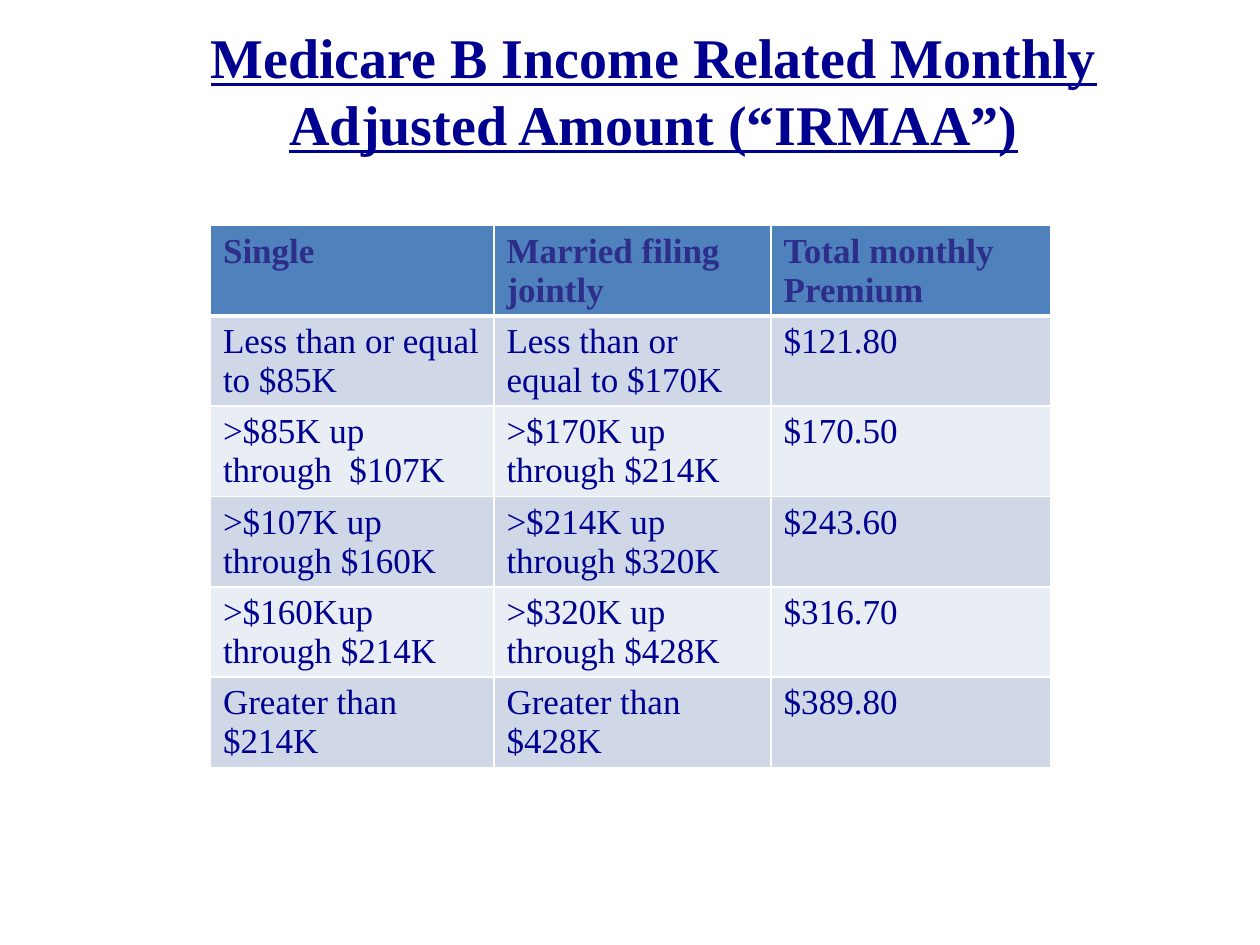
from pptx import Presentation
from pptx.dml.color import RGBColor
from pptx.enum.text import MSO_ANCHOR, MSO_AUTO_SIZE, PP_ALIGN
from pptx.oxml.ns import qn
from pptx.util import Inches, Pt
from lxml import etree

CENTER = PP_ALIGN.CENTER
MIDDLE = MSO_ANCHOR.MIDDLE
NO_AUTOFIT = MSO_AUTO_SIZE.NONE
TITLE_ONLY = 5

FONT = "Times New Roman"
NAVY = "000090"
HEADER_TEXT = "2D2D8A"
HEADER_FILL = "4F81BD"
BAND_FILLS = ("D0D8E8", "E9EDF4")
WHITE = "FFFFFF"

COLUMN_WIDTHS = (2.25, 2.2, 2.22)
ROW_HEIGHT = 0.71
PREMIUMS = (
    ("Single", "Married filing jointly", "Total monthly\nPremium"),
    ("Less than or equal to $85K", "Less than or equal to $170K", "$121.80"),
    (">$85K up through  $107K", ">$170K up through $214K", "$170.50"),
    (">$107K up through $160K", ">$214K up through $320K", "$243.60"),
    (">$160Kup through $214K", ">$320K up through $428K", "$316.70"),
    ("Greater than $214K", "Greater than $428K", "$389.80"),
)


def color(hex_string):
    return RGBColor.from_string(hex_string)


def format_text(frame, size, hex_string, bold=False, underline=False):
    for para in frame.paragraphs:
        for span in para.runs:
            font = span.font
            font.name = FONT
            font.size = Pt(size)
            font.bold = bold
            font.underline = underline
            font.color.rgb = color(hex_string)


def set_borders(cell, bottom_width):
    """Draw white lines on all four sides of a cell, widths in points."""
    properties = cell._tc.get_or_add_tcPr()
    for side, width in (("L", 1), ("R", 1), ("T", 1), ("B", bottom_width)):
        line = etree.SubElement(properties, qn(f"a:ln{side}"), w=str(Pt(width)))
        fill = etree.SubElement(line, qn("a:solidFill"))
        etree.SubElement(fill, qn("a:srgbClr"), val=WHITE)


def add_title(page, text):
    title = page.shapes.title
    title.left, title.top = Inches(0.88), Inches(-0.25)
    title.width, title.height = Inches(8.62), Inches(1.92)
    frame = title.text_frame
    frame.text = text
    frame.word_wrap = True
    frame.auto_size = NO_AUTOFIT
    frame.vertical_anchor = MIDDLE
    frame.paragraphs[0].alignment = CENTER
    format_text(frame, 32, NAVY, bold=True, underline=True)


def fill_cell(cell, text, row):
    is_header = row == 0
    cell.text_frame.text = text
    format_text(cell.text_frame, 20, HEADER_TEXT if is_header else NAVY,
                bold=is_header)
    set_borders(cell, bottom_width=3 if is_header else 1)
    cell.fill.solid()
    cell.fill.fore_color.rgb = color(
        HEADER_FILL if is_header else BAND_FILLS[(row - 1) % 2])


def add_premium_table(page, rows):
    table = page.shapes.add_table(
        len(rows), len(COLUMN_WIDTHS), Inches(1.67), Inches(1.79),
        Inches(sum(COLUMN_WIDTHS)), Inches(ROW_HEIGHT * len(rows))).table
    for column, width in zip(table.columns, COLUMN_WIDTHS):
        column.width = Inches(width)
    for row, texts in enumerate(rows):
        for column, text in enumerate(texts):
            fill_cell(table.cell(row, column), text, row)


def main():
    deck = Presentation()
    deck.slide_width, deck.slide_height = Inches(10), Inches(7.5)
    page = deck.slides.add_slide(deck.slide_layouts[TITLE_ONLY])
    add_title(page, "Medicare B Income Related Monthly Adjusted Amount (“IRMAA”)")
    add_premium_table(page, PREMIUMS)
    deck.save("out.pptx")


if __name__ == "__main__":
    main()
